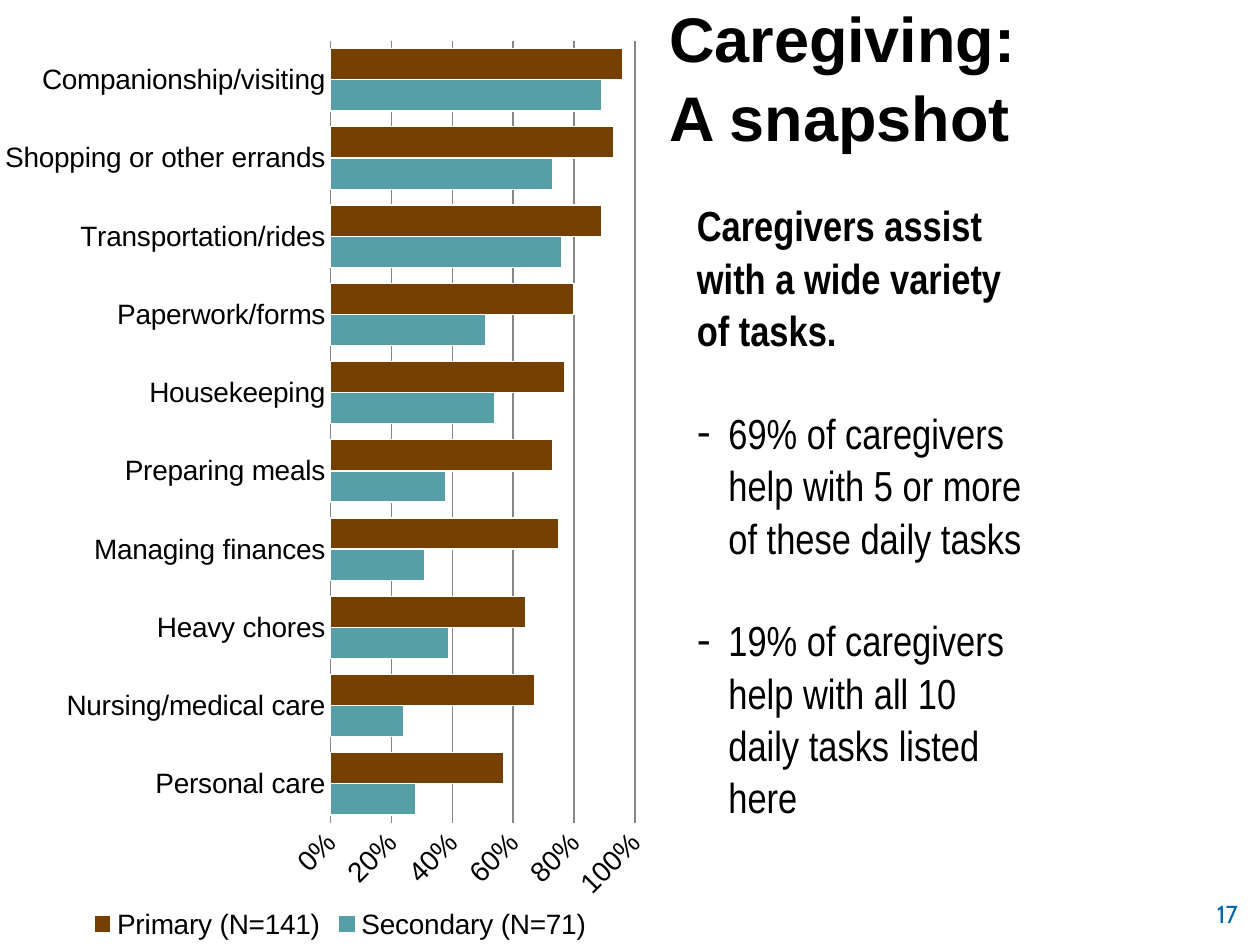
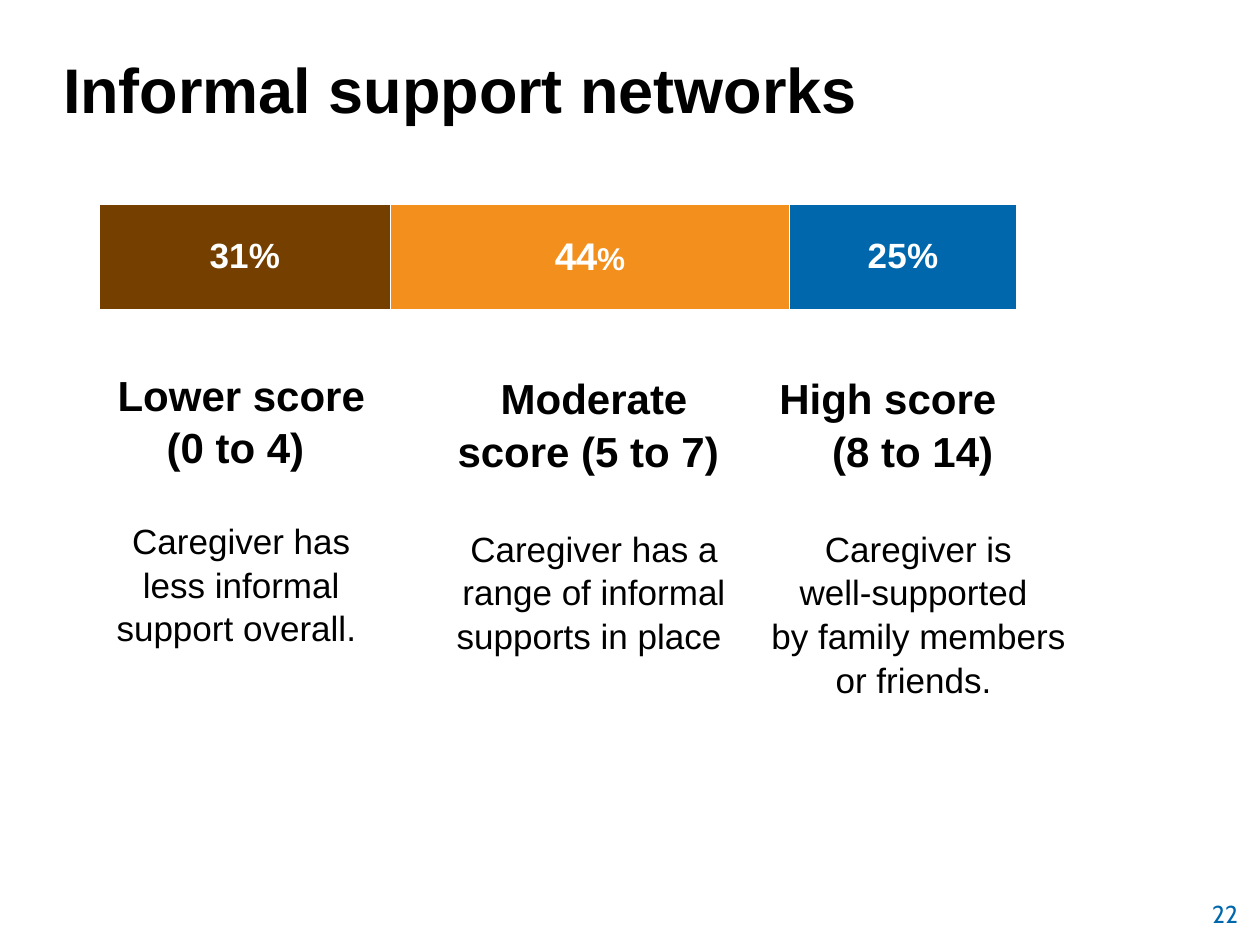
from lxml import etree
from pptx import Presentation
from pptx.chart.data import CategoryChartData
from pptx.dml.color import RGBColor
from pptx.enum.chart import XL_CHART_TYPE, XL_LEGEND_POSITION, XL_TICK_MARK
from pptx.enum.text import MSO_ANCHOR, MSO_AUTO_SIZE, PP_ALIGN
from pptx.oxml.ns import qn
from pptx.util import Pt

LEFT, CENTER, RIGHT = PP_ALIGN.LEFT, PP_ALIGN.CENTER, PP_ALIGN.RIGHT
TOP, BOTTOM = MSO_ANCHOR.TOP, MSO_ANCHOR.BOTTOM
NO_FIT = MSO_AUTO_SIZE.NONE
CLUSTERED, STACKED = XL_CHART_TYPE.BAR_CLUSTERED, XL_CHART_TYPE.BAR_STACKED_100
NO_TICK = XL_TICK_MARK.NONE

COLORS = {
    "black": "000000", "white": "FFFFFF", "grid": "868686", "brown": "753F00",
    "teal": "579FA7", "orange": "F3901D", "blue": "0067AC",
}
COLORS = {name: RGBColor.from_string(value) for name, value in COLORS.items()}
TITLE_ONLY, TITLE_AND_BODY = 5, 1


def write(p, text, size=20, color="black", bold=False, font="Arial",
          align=LEFT, before=0, spacing=1.04):
    """Append text to a paragraph; a newline becomes a line break."""
    p.alignment, p.space_before, p.line_spacing = align, Pt(before), spacing
    for i, line in enumerate(text.split("\n")):
        if i:
            p.add_line_break()
        r = p.add_run()
        r.text = line
        r.font.size, r.font.bold, r.font.name = Pt(size), bold, font
        r.font.color.rgb = COLORS[color]


def new_slide(layout, title, left, top, width, height, number):
    """Add a slide with its title placed and its page number."""
    s = prs.slides.add_slide(prs.slide_layouts[layout])
    sp = s.shapes.title
    sp.left, sp.top, sp.width, sp.height = Pt(left), Pt(top), Pt(width), Pt(height)
    tf = sp.text_frame
    tf.margin_left = tf.margin_right = tf.margin_top = tf.margin_bottom = 0
    tf.vertical_anchor, tf.auto_size, tf.word_wrap = BOTTOM, NO_FIT, True
    write(tf.paragraphs[0], title, size=36, bold=True)

    tf = s.shapes.add_textbox(Pt(564.5), Pt(498), Pt(150), Pt(36)).text_frame
    tf.vertical_anchor, tf.word_wrap = BOTTOM, True
    write(tf.paragraphs[0], number, size=14, color="blue", font="Cabin", align=RIGHT)
    return s


prs = Presentation()
prs.slide_width, prs.slide_height = Pt(720), Pt(540)

# Caregiving tasks
s = new_slide(TITLE_AND_BODY, "Caregiving: A snapshot", 382.3, 31.7, 221, 56.2, "17")
tasks = [
    ("Personal care", 0.28, 0.57),
    ("Nursing/medical care", 0.24, 0.67),
    ("Heavy chores", 0.39, 0.64),
    ("Managing finances", 0.31, 0.75),
    ("Preparing meals", 0.38, 0.73),
    ("Housekeeping", 0.54, 0.77),
    ("Paperwork/forms", 0.51, 0.80),
    ("Transportation/rides", 0.76, 0.89),
    ("Shopping or other errands", 0.73, 0.93),
    ("Companionship/visiting", 0.89, 0.96),
]
names, secondary, primary = zip(*tasks)
data = CategoryChartData(number_format="0%")
data.categories = names
data.add_series("Secondary (N=71)", secondary)
data.add_series("Primary (N=141)", primary)
task_chart = s.shapes.add_chart(CLUSTERED, Pt(-4.3), Pt(12.2), Pt(397.4), Pt(527.8), data).chart
task_chart.has_legend = True
task_chart.legend.position = XL_LEGEND_POSITION.BOTTOM
task_chart.legend.include_in_layout = False
for axis in (task_chart.category_axis, task_chart.value_axis):
    axis.major_tick_mark = axis.minor_tick_mark = NO_TICK
    axis.tick_labels.font.size = Pt(16)
    axis.tick_labels.font.name = "Arial"
task_chart.category_axis.format.line.color.rgb = COLORS["grid"]
axis = task_chart.value_axis
axis.minimum_scale, axis.maximum_scale, axis.major_unit = 0, 1, 0.2
axis.tick_labels.number_format = "0%"
axis.tick_labels.number_format_is_linked = False
axis.format.line.fill.background()
axis.has_major_gridlines = True
axis.major_gridlines.format.line.color.rgb = COLORS["grid"]
axis.major_gridlines.format.line.width = Pt(0.75)
axis._element.find(qn("c:txPr")).find(qn("a:bodyPr")).set("rot", "-2700000")

sp = s.placeholders[1]
sp.left, sp.top, sp.width, sp.height = Pt(391), Pt(109.4), Pt(203.8), Pt(385.2)
tf = sp.text_frame
tf.auto_size, tf.vertical_anchor, tf.word_wrap = NO_FIT, TOP, True
findings = [
    ("Caregivers assist with a wide variety of tasks.", None),
    ("69% of caregivers help with 5 or more of these daily tasks", "-"),
    ("19% of caregivers help with all 10 daily tasks listed here", "-"),
]
for i, (text, bullet) in enumerate(findings):
    p = tf.add_paragraph() if i else tf.paragraphs[0]
    write(p, text, size=24, font="Arial Narrow", bold=not bullet, before=28.8 if i else 0)
    pPr = p._p.get_or_add_pPr()
    indent = Pt(18) if bullet else 0
    pPr.set("marL", str(indent))
    pPr.set("indent", str(-indent))
    if bullet:
        etree.SubElement(pPr, qn("a:buChar")).set("char", bullet)
    else:
        etree.SubElement(pPr, qn("a:buNone"))

# Informal support scores
s = new_slide(TITLE_ONLY, "Informal support networks", 36, 21.6, 558, 50.4, "22")
data = CategoryChartData(number_format="0%")
data.categories = ["1"]
for i, share in enumerate((0.32, 0.44, 0.25), 1):
    data.add_series(f"Series {i}", [share])
score_chart = s.shapes.add_chart(STACKED, Pt(47.5), Pt(88.6), Pt(558), Pt(128.9), data).chart
score_chart.has_legend = False
score_chart.value_axis.has_major_gridlines = False
score_chart.value_axis.visible = score_chart.category_axis.visible = False
label_parts = [[("31%", 20)], [("44", 22), ("%", 18)], None]
for series, parts in zip(score_chart.plots[0].series, label_parts):
    labels = series.data_labels
    labels.show_value = True
    labels.number_format, labels.number_format_is_linked = "0%", False
    labels.font.size, labels.font.bold, labels.font.name = Pt(20), True, "Arial"
    labels.font.color.rgb = COLORS["white"]
    if parts:
        p = series.points[0].data_label.text_frame.paragraphs[0]
        for text, size in parts:
            write(p, text, size=size, color="white", bold=True, align=CENTER, spacing=1.0)

# Each column: left, top, width, gap, heading lines with right margin, description
columns = [
    (54, 206.2, 167.8, 26.3, [("Lower score (0 to 4) ", 0)],
     "Caregiver has less informal support overall. "),
    (245.5, 208.3, 187.9, 28.7, [("Moderate score (5 to 7) ", 0)],
     "Caregiver has a range of informal supports in place "),
    (432.7, 208.3, 184.3, 28.7, [("High score", 35), ("(8 to 14) ", 0)],
     "Caregiver is\nwell-supported \nby family members or friends. "),
]
for left, top, width, gap, heading, description in columns:
    tf = s.shapes.add_textbox(Pt(left), Pt(top), Pt(width), Pt(190)).text_frame
    tf.word_wrap, tf.vertical_anchor = True, TOP
    p = tf.paragraphs[0]
    for text, right_margin in heading:
        write(p, text, size=24, bold=True, align=CENTER)
        p._p.get_or_add_pPr().set("marR", str(Pt(right_margin)))
        p = tf.add_paragraph()
    write(p, description, align=CENTER, before=gap)

# Shared chart style: font, gap, series colours and plot position
chart_styles = [
    (task_chart, 16, 51, ("teal", "brown"), (0.486, 0.021, 0.438, 0.847)),
    (score_chart, 18, 95, ("brown", "orange", "blue"), (0.017, 0, 0.939, 0.904)),
]
for chart, size, gap, fills, plot_box in chart_styles:
    chart.has_title = False
    chart.font.size, chart.font.name = Pt(size), "Arial"
    chart.font.color.rgb = COLORS["black"]
    plot = chart.plots[0]
    plot.gap_width, plot.vary_by_categories = gap, False
    for series, fill in zip(plot.series, fills):
        series.format.fill.solid()
        series.format.fill.fore_color.rgb = COLORS[fill]
        series.format.line.color.rgb = COLORS["white"]
        series.format.line.width = Pt(0.75)
    area = chart._chartSpace.chart.plotArea
    for old in area.findall(qn("c:layout")):
        area.remove(old)
    layout = etree.Element(qn("c:layout"))
    manual = etree.SubElement(layout, qn("c:manualLayout"))
    settings = [("layoutTarget", "inner"), ("xMode", "edge"), ("yMode", "edge")]
    for tag, value in settings + list(zip("xywh", plot_box)):
        etree.SubElement(manual, qn(f"c:{tag}")).set("val", str(value))
    area.insert(0, layout)

prs.save("out.pptx")
